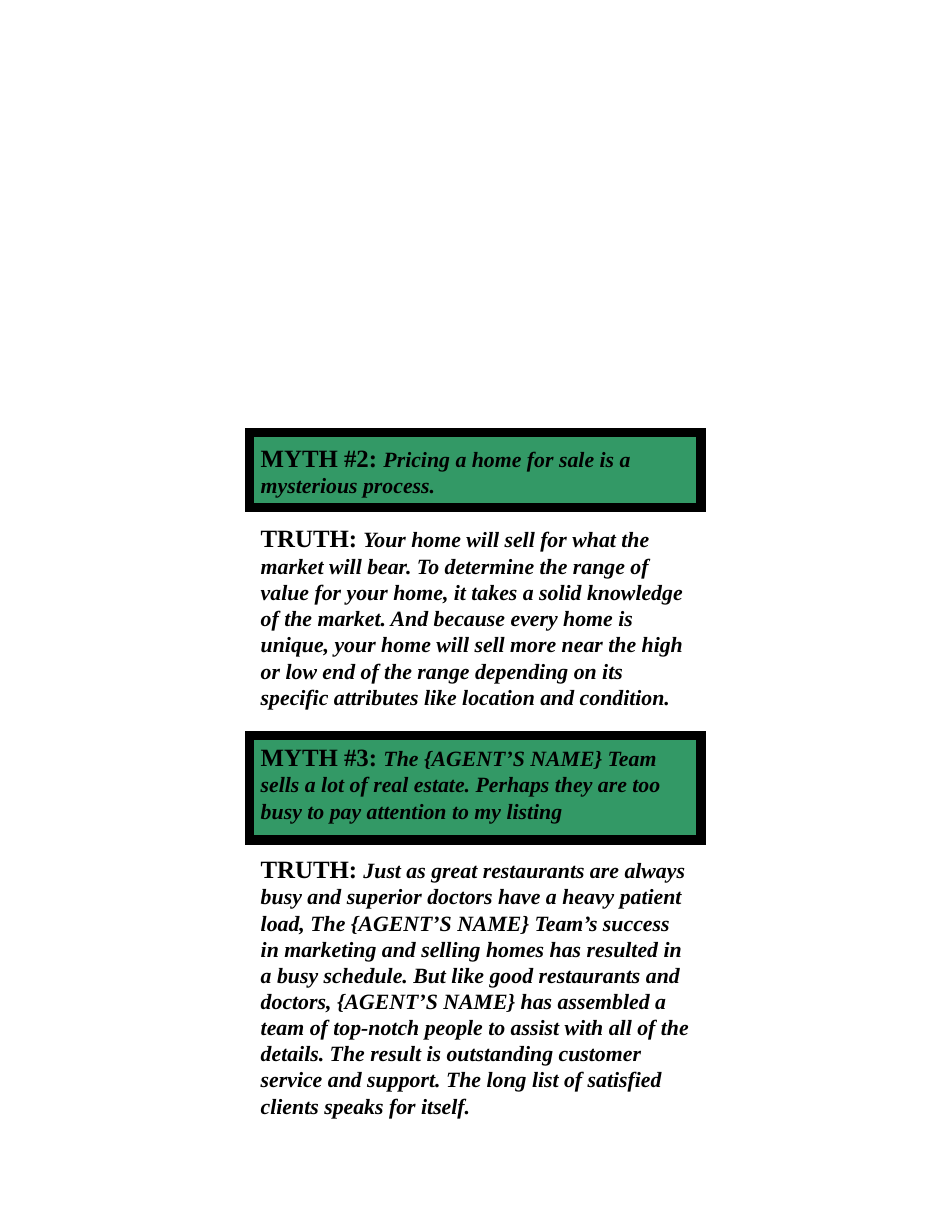
from dataclasses import dataclass

from lxml.etree import SubElement
from pptx import Presentation
from pptx.dml.color import RGBColor
from pptx.enum.shapes import MSO_SHAPE as Shape
from pptx.enum.text import MSO_AUTO_SIZE as AutoSize
from pptx.oxml.ns import qn
from pptx.util import Inches, Pt


@dataclass(frozen=True)
class Theme:
    font: str = "Times New Roman"
    ink: RGBColor = RGBColor(0x00, 0x00, 0x00)
    panel: RGBColor = RGBColor(0x33, 0x99, 0x66)
    label_size: Pt = Pt(16)
    text_size: Pt = Pt(14)
    border: Pt = Pt(6)


class MythPage:
    """One column of text on a grid of 850 columns and 1100 rows."""

    COLUMNS, ROWS = 850, 1100
    LEFT, WIDTH = 223, 403

    def __init__(self, deck, theme):
        self.theme = theme
        self.page = deck.slides.add_slide(deck.slide_layouts[6])
        self.column = deck.slide_width / self.COLUMNS
        self.row = deck.slide_height / self.ROWS

    def place(self, top, height):
        return (round(self.LEFT * self.column), round(top * self.row),
                round(self.WIDTH * self.column), round(height * self.row))

    def panel(self, top, height):
        panel = self.page.shapes.add_shape(Shape.RECTANGLE, *self.place(top, height))
        panel.shadow.inherit = False
        panel.fill.solid()
        panel.fill.fore_color.rgb = self.theme.panel
        panel.line.color.rgb = self.theme.ink
        panel.line.width = self.theme.border
        # Square corners on the heavy border
        SubElement(panel.line._ln, qn("a:miter"), lim="800000")

    def statement(self, top, height, label, text):
        box = self.page.shapes.add_textbox(*self.place(top, height))
        frame = box.text_frame
        frame.word_wrap = True
        frame.auto_size = AutoSize.SHAPE_TO_FIT_TEXT
        para = frame.paragraphs[0]
        for words, size, italic in ((f"{label}: ", self.theme.label_size, False),
                                    (text, self.theme.text_size, True)):
            span = para.add_run()
            span.text = words
            span.font.name = self.theme.font
            span.font.size = size
            span.font.bold = True
            span.font.italic = italic
            span.font.color.rgb = self.theme.ink


def main():
    deck = Presentation()
    deck.slide_width, deck.slide_height = Inches(8.5), Inches(11)
    sheet = MythPage(deck, Theme())

    # Myth 2: pricing
    sheet.panel(386, 67)
    sheet.statement(390, 60, "MYTH #2",
                    "Pricing a home for sale is a mysterious process.")
    sheet.statement(
        462, 176, "TRUTH",
        "Your home will sell for what the market will bear. To determine the "
        "range of value for your home, it takes a solid knowledge of the market. "
        "And because every home is unique, your home will sell more near the high "
        "or low end of the range depending on its specific attributes like "
        "location and condition.")

    # Myth 3: attention to the listing
    sheet.panel(657, 93)
    sheet.statement(
        657, 83, "MYTH #3",
        "The {AGENT’S NAME} Team sells a lot of real estate. Perhaps they are "
        "too busy to pay attention to my listing")
    sheet.statement(
        757, 246, "TRUTH",
        "Just as great restaurants are always busy and superior doctors have a "
        "heavy patient load, The {AGENT’S NAME} Team’s success in marketing and "
        "selling homes has resulted in a busy schedule. But like good restaurants "
        "and doctors, {AGENT’S NAME} has assembled a team of top-notch people to "
        "assist with all of the details. The result is outstanding customer "
        "service and support. The long list of satisfied clients speaks for itself.")

    deck.save("out.pptx")


if __name__ == "__main__":
    main()
